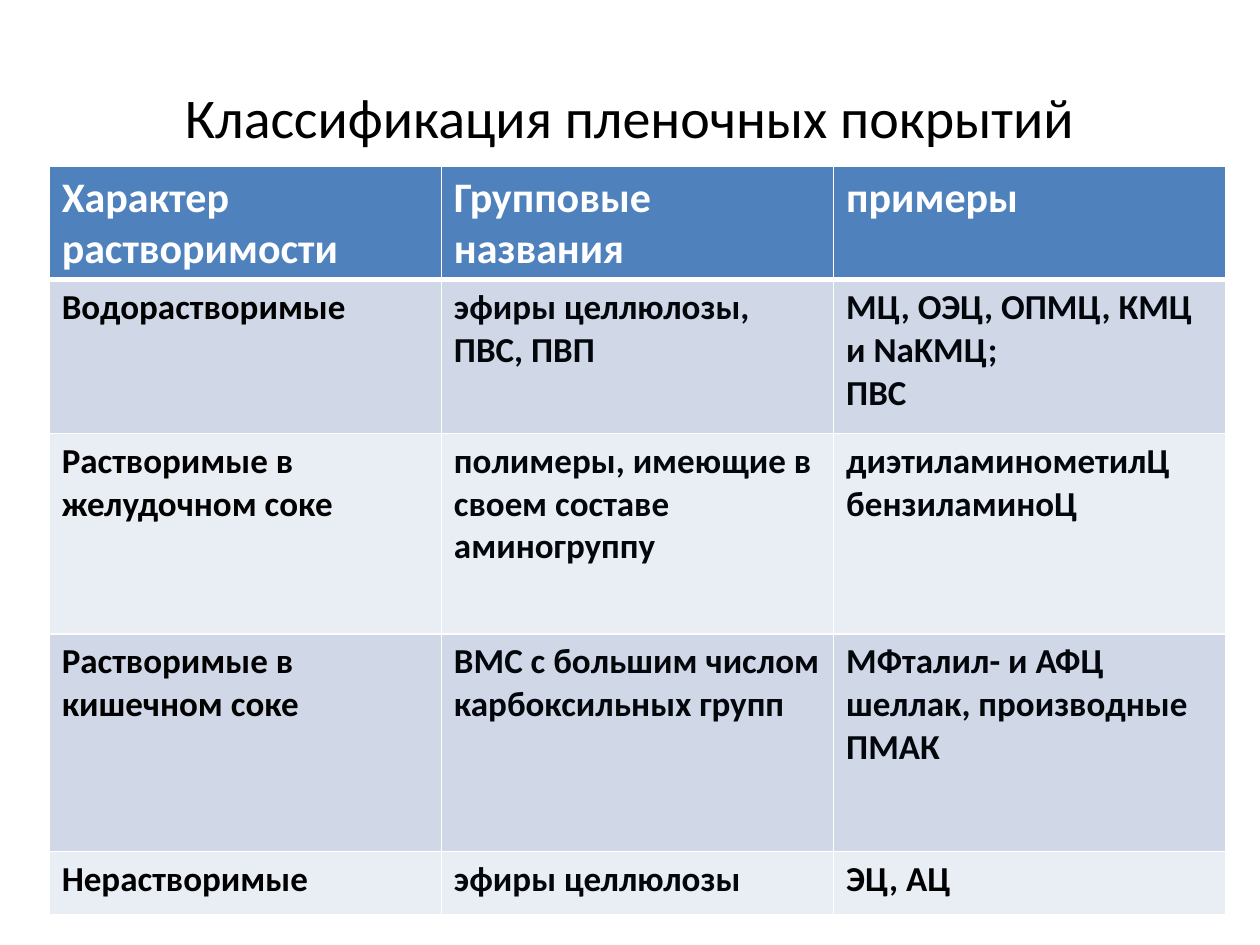
from lxml.etree import SubElement
from pptx import Presentation
from pptx.dml.color import RGBColor
from pptx.enum.text import MSO_ANCHOR, PP_ALIGN
from pptx.oxml.ns import qn
from pptx.util import Inches, Pt

# Content: a line break in a cell starts a new paragraph
TITLE = "Классификация пленочных покрытий"
HEADINGS = ["Характер растворимости", "Групповые названия", "примеры"]
COATINGS = [
    ["Водорастворимые", "эфиры целлюлозы,\nПВС, ПВП", "МЦ, ОЭЦ, ОПМЦ, КМЦ и NaKMЦ;\nПВС"],
    ["Растворимые в желудочном соке", "полимеры, имеющие в своем составе аминогруппу",
     "диэтиламинометилЦ бензиламиноЦ"],
    ["Растворимые в кишечном соке", "ВМС с большим числом карбоксильных групп",
     "МФталил- и АФЦ шеллак, производные ПМАК"],
    ["Нерастворимые", "эфиры целлюлозы", "ЭЦ, АЦ"],
]

# Look
FONT = "Calibri"
COLORS = {"title": "000000", "heading": "FFFFFF", "kind": "000000", "detail": "03070C",
          "header": "4F81BD", "odd": "D0D8E8", "even": "E9EDF4", "line": "FFFFFF"}
WIDTH, HEIGHT = 10, 7.5
TABLE_LEFT, TABLE_TOP, TABLE_WIDTH = 0.39, 1.32, 9.34
ROW_HEIGHTS = [0.86, 1.22, 1.59, 1.73, 0.5]


def color(name):
    return RGBColor.from_string(COLORS[name])


def style_text(frame, size, color_name, bold=False, align=PP_ALIGN.LEFT):
    for paragraph in frame.paragraphs:
        paragraph.alignment = align
        for run in paragraph.runs:
            run.font.name, run.font.size, run.font.bold = FONT, Pt(size), bold
            run.font.color.rgb = color(color_name)


def add_borders(cell, widths):
    properties = cell._tc.get_or_add_tcPr()
    for side, width in widths.items():
        line = SubElement(properties, qn(f"a:ln{side}"), w=str(Pt(width)))
        SubElement(SubElement(line, qn("a:solidFill")), qn("a:srgbClr"), val=COLORS["line"])


presentation = Presentation()
presentation.slide_width, presentation.slide_height = Inches(WIDTH), Inches(HEIGHT)
slide = presentation.slides.add_slide(presentation.slide_layouts[6])

# Title
title = slide.shapes.add_textbox(
    Inches(0.05 * WIDTH), Inches(0.04 * HEIGHT), Inches(0.9 * WIDTH), Inches(1.25)).text_frame
title.word_wrap = True
title.vertical_anchor = MSO_ANCHOR.MIDDLE
title.text = TITLE
style_text(title, 32, "title", align=PP_ALIGN.CENTER)

# Classification table
rows = [HEADINGS] + COATINGS
table = slide.shapes.add_table(
    len(rows), len(HEADINGS), Inches(TABLE_LEFT), Inches(TABLE_TOP),
    Inches(TABLE_WIDTH), Inches(sum(ROW_HEIGHTS))).table
for row, height in zip(table.rows, ROW_HEIGHTS):
    row.height = Inches(height)

for r, texts in enumerate(rows):
    is_header = r == 0
    is_last = r == len(rows) - 1
    band = "header" if is_header else "odd" if r % 2 else "even"
    for c, text in enumerate(texts):
        cell = table.cell(r, c)
        cell.text_frame.text = text
        if is_header:
            style_text(cell.text_frame, 24, "heading", bold=True)
        else:
            is_kind = c == 0 or (is_last and c == len(texts) - 1)
            style_text(cell.text_frame, 20, "kind" if is_kind else "detail", bold=True)
        add_borders(cell, {"L": 1, "R": 1, "T": 3 if r == 1 else 1, "B": 3 if is_header else 1})
        cell.fill.solid()
        cell.fill.fore_color.rgb = color(band)

presentation.save("out.pptx")
